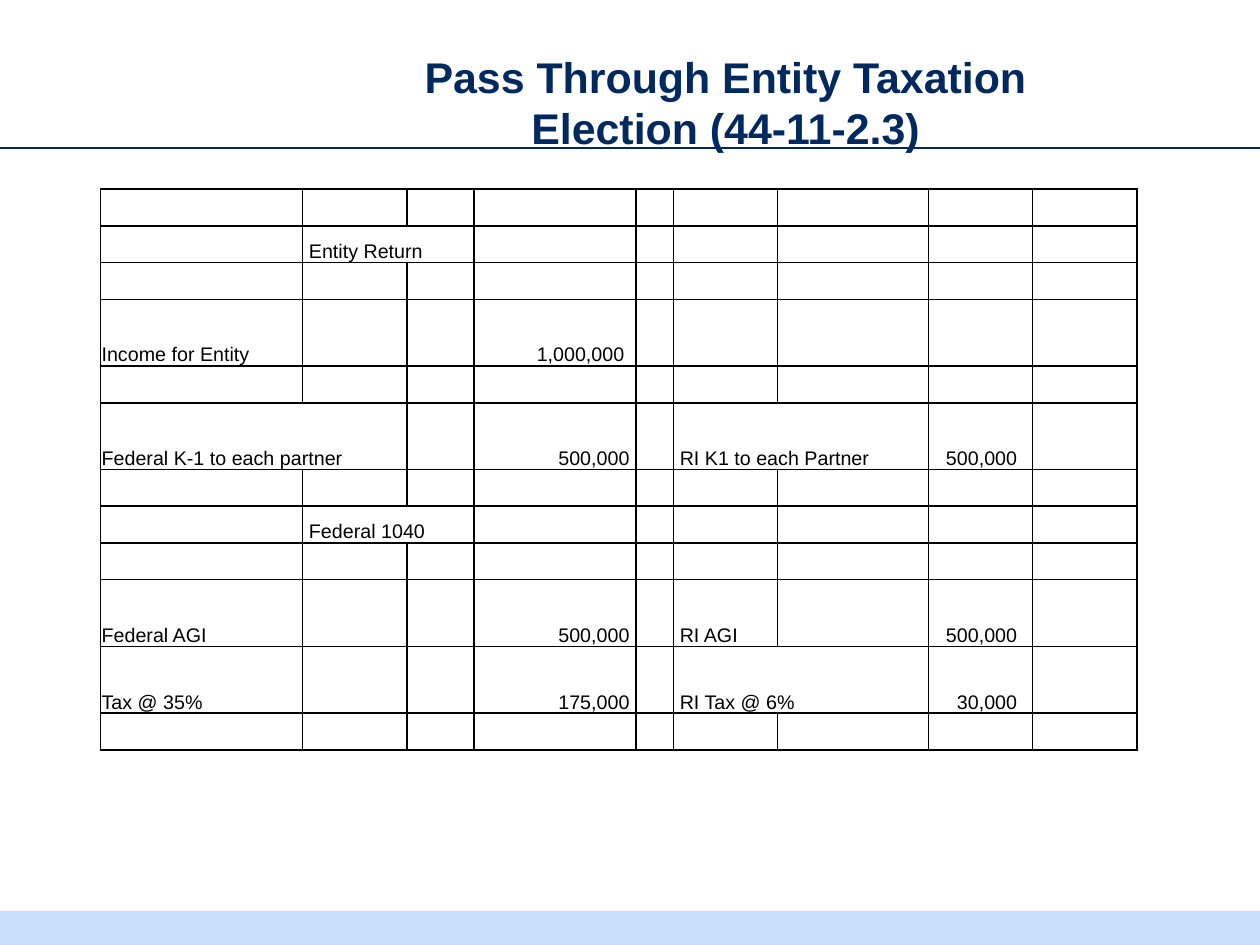
from lxml.etree import SubElement
from pptx import Presentation
from pptx.dml.color import RGBColor
from pptx.enum.shapes import MSO_CONNECTOR, MSO_SHAPE
from pptx.enum.text import MSO_ANCHOR, MSO_AUTO_SIZE, PP_ALIGN
from pptx.oxml.ns import qn
from pptx.util import Inches, Pt

COLORS = {"navy": "002960", "band": "C7DFFB", "ink": "000000"}
FONT = "Arial"

# A 4:3 page
deck = Presentation()
deck.slide_width, deck.slide_height = Pt(705.2), Pt(528.9)
slide = deck.slides.add_slide(deck.slide_layouts[5])


def add_text(paragraph, text, size, color, bold=False):
    run = paragraph.add_run()
    run.text = text
    run.font.name, run.font.size, run.font.bold = FONT, Pt(size), bold
    run.font.color.rgb = RGBColor.from_string(COLORS[color])


# Footer band and rule under the heading
footer_top = Inches(7.08)
footer = slide.shapes.add_shape(MSO_SHAPE.RECTANGLE, 0, footer_top,
                                deck.slide_width, deck.slide_height - footer_top)
footer.shadow.inherit = False
footer.fill.solid()
footer.fill.fore_color.rgb = RGBColor.from_string(COLORS["band"])
footer.line.fill.background()

rule = slide.shapes.add_connector(MSO_CONNECTOR.STRAIGHT, 0, Inches(1.15),
                                  deck.slide_width, Inches(1.15))
rule.line.width = Pt(1.5)
rule.line.color.rgb = RGBColor.from_string(COLORS["navy"])
SubElement(rule._element.spPr, qn("a:effectLst"))

# Heading
heading = slide.shapes.title
heading.left, heading.top = Inches(2.97), Inches(0.34)
heading.width, heading.height = Inches(5.34), Inches(0.91)
frame = heading.text_frame
frame.word_wrap = True
frame.auto_size = MSO_AUTO_SIZE.NONE
frame.vertical_anchor = MSO_ANCHOR.TOP
frame.margin_left = frame.margin_right = Inches(0.05)
frame.margin_top = frame.margin_bottom = Inches(0.05)
frame.paragraphs[0].alignment = PP_ALIGN.CENTER
add_text(frame.paragraphs[0], "Pass Through Entity Taxation Election (44-11-2.3)",
         24, "navy", True)

# Table grid: rows are either tall or a fixed share of a tall one
column_shares = [1.57, 0.81, 0.52, 1.26, 0.29, 0.81, 1.17, 0.81, 0.81]
tall_rows = {3, 5, 9, 10}
row_shares = [1 if row in tall_rows else 0.55 for row in range(12)]
table_width, table_height = Inches(8.06), Inches(4.36)
tax_table = slide.shapes.add_table(
    len(row_shares), len(column_shares), Inches(0.78), Inches(1.47),
    table_width, table_height).table
tax_table.first_row = tax_table.horz_banding = False
for column, share in zip(tax_table.columns, column_shares):
    column.width = round(table_width * share / sum(column_shares))
for row, share in zip(tax_table.rows, row_shares):
    row.height = round(table_height * share / sum(row_shares))

# Entries by (row, column); labels that span two columns
entries = {
    (1, 1): "Entity Return",
    (3, 0): "Income for Entity", (3, 3): "1,000,000",
    (5, 0): "Federal K-1 to each partner", (5, 3): "500,000",
    (5, 5): "RI K1 to each Partner", (5, 7): "500,000",
    (7, 1): "Federal 1040",
    (9, 0): "Federal AGI", (9, 3): "500,000", (9, 5): "RI AGI", (9, 7): "500,000",
    (10, 0): "Tax @ 35%", (10, 3): "175,000", (10, 5): "RI Tax @ 6%", (10, 7): "30,000",
}
for row, column in [(1, 1), (5, 0), (5, 5), (7, 1), (10, 5)]:
    tax_table.cell(row, column).merge(tax_table.cell(row, column + 1))
label_indents = {1: 0.05, 5: 0.05}
amount_margins = {3: 0.05, 7: 0.12}

for row in range(len(row_shares)):
    for column in range(len(column_shares)):
        cell = tax_table.cell(row, column)
        cell.vertical_anchor = MSO_ANCHOR.BOTTOM
        cell.margin_left = Inches(label_indents.get(column, 0.01))
        cell.margin_right = Inches(amount_margins.get(column, 0.01))
        cell.margin_top, cell.margin_bottom = Inches(0.01), 0

        # Borders come before the fill in the cell properties
        properties = cell._tc.get_or_add_tcPr()
        for side in ("a:lnL", "a:lnR", "a:lnT", "a:lnB"):
            border = SubElement(properties, qn(side), w=str(Pt(1)))
            border_fill = SubElement(border, qn("a:solidFill"))
            SubElement(border_fill, qn("a:srgbClr"), val=COLORS["ink"])
        cell.fill.background()

        paragraph = cell.text_frame.paragraphs[0]
        if (row, column) in entries:
            if column in amount_margins:
                paragraph.alignment = PP_ALIGN.RIGHT
            add_text(paragraph, entries[row, column], 11, "ink")
        else:
            # Small text size keeps blank rows at their set height
            SubElement(paragraph._p, qn("a:endParaRPr"), sz="1100")

# The larger income figure sits slightly further from the edge
tax_table.cell(3, 3).margin_right = Inches(0.09)

deck.save("out.pptx")
